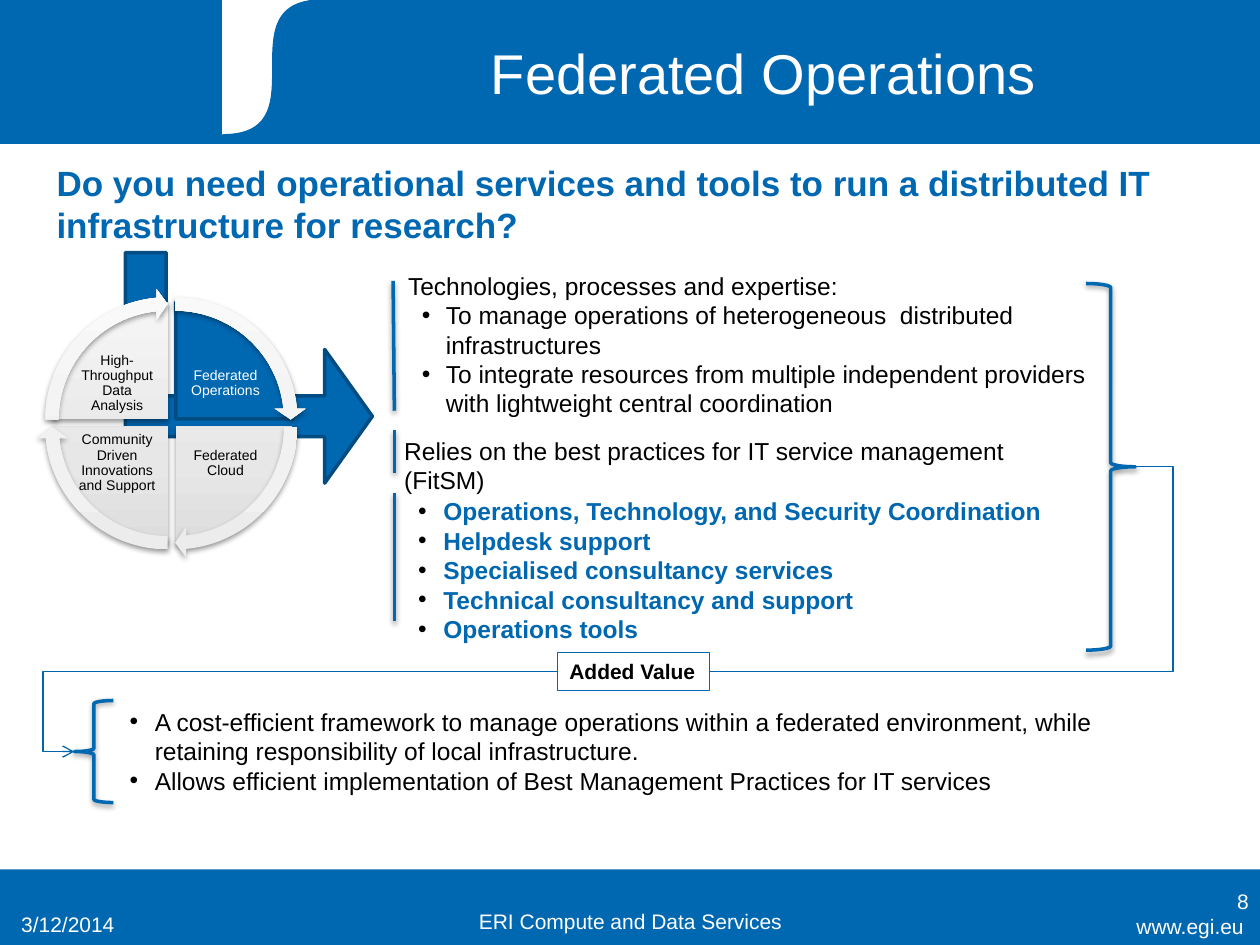
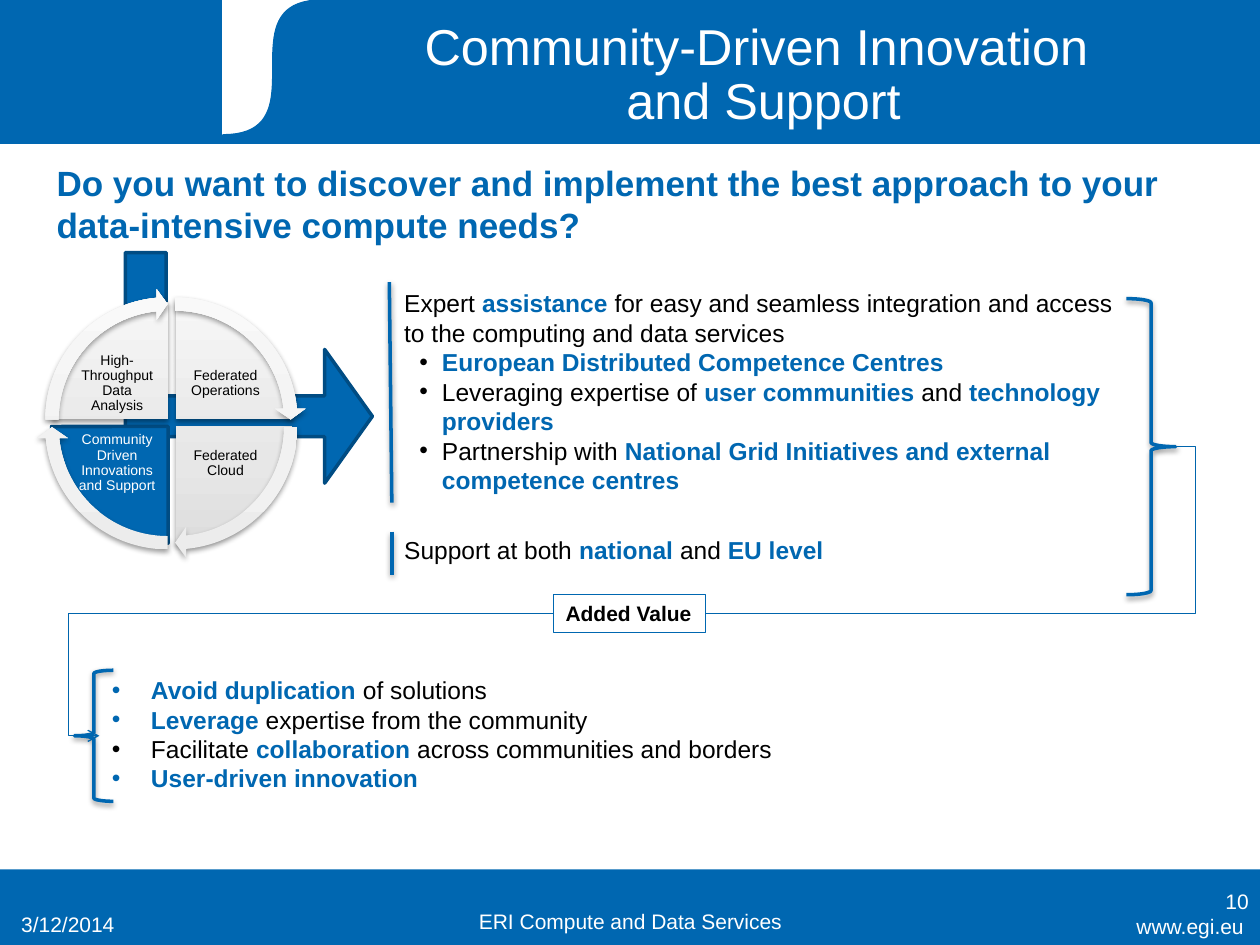
from copy import deepcopy
from dataclasses import dataclass
from typing import Optional

from lxml import etree
from pptx import Presentation, util as u
from pptx.dml.color import RGBColor
from pptx.enum import shapes, text
from pptx.oxml.ns import qn

COLS, ROWS = 100, 75  # grid cells across and down the slide
LEFT, CENTER, RIGHT = text.PP_ALIGN.LEFT, text.PP_ALIGN.CENTER, text.PP_ALIGN.RIGHT
TOP, MIDDLE, BOTTOM = (text.MSO_ANCHOR.TOP, text.MSO_ANCHOR.MIDDLE,
                       text.MSO_ANCHOR.BOTTOM)
SHAPE = shapes.MSO_SHAPE


@dataclass(frozen=True)
class Theme:
    font: str = "Arial"
    blue: str = "0067B1"
    edge: str = "004C83"
    link: str = "0065AD"
    white: str = "FFFFFF"
    black: str = "000000"
    pie: tuple = ((0, "DDDDDD"), (0.35, "E7E7E7"), (1, "F6F6F6"))
    ring: tuple = ((0, "ECECEC"), (0.35, "F1F1F1"), (1, "F9F9F9"))
    question: float = 20
    body: float = 14
    small: float = 12
    label: float = 8
    heavy: float = 2
    thin: float = 0.75
    hair: float = 0.25


T = Theme()


@dataclass(frozen=True)
class Box:
    """A rectangle in grid cells."""
    x: float
    y: float
    w: float
    h: float

    @property
    def right(self) -> float:
        return self.x + self.w

    @property
    def mid(self) -> float:
        return self.y + self.h / 2


@dataclass(frozen=True)
class Block:
    """Paragraphs: a leading bullet indents, and *stars* mark accented words."""
    box: Box
    paragraphs: tuple
    indent: float = 0
    hang: float = 0
    bullet: Optional[str] = T.black


@dataclass(frozen=True)
class Page:
    number: str
    title: str
    title_size: float
    question: str
    active: str
    blocks: tuple
    rules: tuple
    right_brace: Box
    left_brace: Box
    added_value: Box
    left_turn: float
    right_turn: float
    arrow_tip: float


# Clockwise from the top right: label, left and top of pie, left and top of label
QUADRANTS = (
    ("Federated Operations", 4.7, 24, 14.5, 27.9),
    ("Federated Cloud", 4.7, 24.6, 14.5, 34.2),
    ("Community Driven Innovations and Support", 4.1, 24.6, 5.9, 34.2),
    ("High-Throughput Data Analysis", 4.1, 24, 5.9, 27.9),
)

PAGES = (
    Page(
        "8", "Federated Operations", 32,
        "Do you need operational services and tools to run a distributed IT "
        "infrastructure for research?",
        "Federated Operations",
        (
            Block(Box(31.4, 21, 56.4, 12.8), (
                "Technologies, processes and expertise:",
                "•To manage operations of heterogeneous  distributed infrastructures",
                "•To integrate resources from multiple independent providers "
                "with lightweight central coordination"), 3, 1.9),
            Block(Box(31.3, 38.9, 55.2, 12.8), (
                "•*Operations, Technology, and Security Coordination*",
                "•*Helpdesk support*",
                "•*Specialised consultancy services*",
                "•*Technical consultancy and support*",
                "•*Operations tools*"), 2.9, 2),
            Block(Box(31.1, 34.1, 56.4, 3.4), (
                "Relies on the best practices for IT service management (FitSM)",)),
            Block(Box(9.3, 55.6, 80.9, 8.1), (
                "•A cost-efficient framework to manage operations within a federated "
                "environment, while retaining responsibility of local infrastructure.",
                "•Allows efficient implementation of Best Management Practices "
                "for IT services"), 2, 2),
        ),
        ((31.2, 22.3, 31.3, 32.6), (31.3, 39.1, 31.3, 49.3), (31.3, 34.1, 31.3, 37.5)),
        Box(86.2, 22.5, 3.9, 29.1), Box(5.9, 55.6, 3.1, 8.1), Box(44.2, 51.8, 12.1, 3),
        3.4, 93.1, 5.9),
    Page(
        "10", "Community-Driven Innovation \nand Support", 28.8,
        "Do you want to discover and implement the best approach to your "
        "data-intensive compute needs?",
        "Community Driven Innovations and Support",
        (
            Block(Box(31.1, 22.4, 58.3, 17.5), (
                "Expert *assistance *for easy and seamless integration and access "
                "to the computing and data services",
                "•*European Distributed Competence Centres*",
                "•Leveraging expertise of *user communities *and *technology providers*",
                "•Partnership with *National Grid Initiatives and external "
                "competence centres*"), 3, 1.8),
            Block(Box(31.1, 42, 58.3, 3.4), (
                "Support at both *national *and *EU level*",)),
            Block(Box(7.9, 53.1, 86.6, 10.4), (
                "•*Avoid duplication *of solutions",
                "•*Leverage *expertise from the community",
                "•Facilitate *collaboration *across communities and borders",
                "•*User-driven innovation*"), 3.1, 3.1, None),
        ),
        ((30.9, 22.4, 31.1, 39.9), (31.1, 42.2, 31.1, 45.6)),
        Box(89.4, 23.7, 3.9, 23.5), Box(5.9, 53.2, 3.1, 10.4), Box(43.9, 47.2, 12.1, 3),
        5.4, 94.9, 7.9),
)

prs = Presentation()
prs.slide_width, prs.slide_height = u.Inches(10), u.Inches(7.5)


def col(n: float) -> int:
    return round(prs.slide_width * n / COLS)


def row(n: float) -> int:
    return round(prs.slide_height * n / ROWS)


def place(b: Box) -> tuple:
    return col(b.x), row(b.y), col(b.w), row(b.h)


def rgb(color: str) -> RGBColor:
    return RGBColor.from_string(color)


def set_effects(sp, shadow: bool) -> None:
    """Replace the theme's shadow by a soft one below the shape, or by none."""
    effects = etree.SubElement(sp.element.spPr, qn("a:effectLst"))
    if shadow:
        outer = etree.SubElement(effects, qn("a:outerShdw"), blurRad="40000",
                                 dist="20000", dir="5400000", rotWithShape="0")
        color = etree.SubElement(outer, qn("a:srgbClr"), val=T.black)
        etree.SubElement(color, qn("a:alpha"), val="38000")


def set_fill(sp, fill) -> None:
    """Fill with nothing, one colour, or gradient stops running upwards."""
    if fill is None:
        sp.fill.background()
    elif isinstance(fill, str):
        sp.fill.solid()
        sp.fill.fore_color.rgb = rgb(fill)
    else:
        sp.fill.gradient()
        sp.fill.gradient_angle = 90
        stops = sp.element.spPr.find(".//" + qn("a:gsLst"))
        stops.append(deepcopy(stops[0]))
        for stop, (position, color) in zip(sp.fill.gradient_stops, fill):
            stop.position, stop.color.rgb = position, rgb(color)


def style(sp, fill=None, line: Optional[str] = None, width: float = T.thin,
          shadow: bool = False):
    set_fill(sp, fill)
    if line:
        sp.line.color.rgb, sp.line.width = rgb(line), u.Pt(width)
    else:
        sp.line.fill.background()
    set_effects(sp, shadow)
    return sp


def add_shape(s, kind, box: Box, adj: tuple = (), **look):
    sp = s.shapes.add_shape(kind, *place(box))
    for i, value in enumerate(adj):
        sp.adjustments[i] = value
    return style(sp, **look)


def add_bullet(p, block: Block) -> None:
    pPr = p._p.get_or_add_pPr()
    pPr.set("marL", str(col(block.indent)))
    pPr.set("indent", str(-col(block.hang)))
    if block.bullet:
        color = etree.SubElement(pPr, qn("a:buClr"))
        etree.SubElement(color, qn("a:srgbClr"), val=block.bullet)
    etree.SubElement(pPr, qn("a:buFont"), typeface=T.font)
    etree.SubElement(pPr, qn("a:buChar"), char="•")


def add_run(p, words: str, size: float, color: str, bold: bool) -> None:
    for i, part in enumerate(words.split("\n")):
        if i:
            p.add_line_break()
        r = p.add_run()
        r.text = part
        r.font.name, r.font.size, r.font.bold = T.font, u.Pt(size), bold
        r.font.color.rgb = rgb(color)


def write(sp, *paragraphs: str, size: float = T.body, color: str = T.black,
          bold: bool = False, align=LEFT, anchor=TOP, spacing: Optional[float] = None,
          inset: tuple = (1, 0.5), wrap: bool = True,
          block: Optional[Block] = None) -> None:
    tf = sp.text_frame
    tf.word_wrap, tf.vertical_anchor = wrap, anchor
    tf.margin_left = tf.margin_right = col(inset[0])
    tf.margin_top = tf.margin_bottom = row(inset[1])
    for i, words in enumerate(paragraphs):
        p = tf.add_paragraph() if i else tf.paragraphs[0]
        p.alignment, p.line_spacing = align, spacing
        if block and words.startswith("•"):
            add_bullet(p, block)
            words = words[1:]
        for j, part in enumerate(words.split("*")):
            if part:
                accent = j % 2 == 1
                add_run(p, part, size, T.blue if accent else color, bold or accent)


def add_text(s, box: Box, *paragraphs: str, **fmt) -> None:
    write(s.shapes.add_textbox(*place(box)), *paragraphs, **fmt)


def add_line(s, x1: float, y1: float, x2: float, y2: float,
             turn: Optional[float] = None, arrow: bool = False) -> None:
    """A shadowed straight rule, or a thin elbow whose upright runs at column turn."""
    elbow = turn is not None
    kind = shapes.MSO_CONNECTOR.ELBOW if elbow else shapes.MSO_CONNECTOR.STRAIGHT
    sp = s.shapes.add_connector(kind, col(x1), row(y1), col(x2), row(y2))
    sp.line.color.rgb = rgb(T.link if elbow else T.blue)
    sp.line.width = u.Pt(T.thin if elbow else T.heavy)
    if elbow:
        guides = sp.element.spPr.find(".//" + qn("a:avLst"))
        share = round((turn - x1) / (x2 - x1) * 100000)
        etree.SubElement(guides, qn("a:gd"), name="adj1", fmla=f"val {share}")
    if arrow:
        etree.SubElement(sp.line._get_or_add_ln(), qn("a:tailEnd"), type="arrow")
    set_effects(sp, not elbow)


def add_swoosh(s, box: Box, bend: float, steps: int = 40) -> None:
    """Blue panel whose left edge is an S curve, bend columns wide."""
    x0, x1, bottom = box.x, box.x + bend, box.y + box.h
    curve = []
    for i in range(steps + 1):
        t = i / steps
        a, b, c, d = (1 - t) ** 3, 3 * t * (1 - t) ** 2, 3 * t * t * (1 - t), t ** 3
        curve.append((col(x0 * (a + c) + x1 * (b + d)),
                      row(bottom * (a + b) + box.y * (c + d))))
    outline = s.shapes.build_freeform(col(box.right), row(box.y))
    outline.add_line_segments([(col(box.right), row(bottom)), *curve])
    style(outline.convert_to_shape(), fill=T.blue, line=T.blue)


def add_frame(s, page: Page) -> None:
    add_shape(s, SHAPE.RECTANGLE, Box(0, 69, COLS, 6), fill=T.blue)
    add_shape(s, SHAPE.RECTANGLE, Box(0, 0, COLS, 11.4), fill=T.blue, line=T.blue)
    notch = Box(17.7, 0, 19.7, 10.7)
    add_shape(s, SHAPE.RECTANGLE, notch, fill=T.white, line=T.white)
    add_swoosh(s, notch, 7.9)
    add_text(s, Box(23.2, 1.3, 74.8, 9.5), page.title, size=page.title_size,
             color=T.white, align=CENTER, anchor=MIDDLE, spacing=0.9)
    for box, words, align, anchor in (
            (Box(83.9, 72, 15.8, 3.1), "www.egi.eu", RIGHT, TOP),
            (Box(0.7, 70.8, 23.3, 4), "3/12/2014", LEFT, BOTTOM),
            (Box(34.2, 70.6, 31.7, 4), "ERI Compute and Data Services", CENTER, BOTTOM),
            (Box(76.8, 69.5, 23.3, 4), page.number, RIGHT, MIDDLE)):
        add_text(s, box, words, size=T.small, color=T.white, align=align, anchor=anchor)
    add_text(s, Box(3.5, 12.3, 92.1, 7.7), page.question, size=T.question,
             color=T.blue, bold=True)


def add_wheel(s, active: str) -> None:
    arrow = add_shape(s, SHAPE.BENT_UP_ARROW, Box(10.6, 19.4, 18.3, 19.6),
                      (0.177, 0.29, 0.207), fill=T.blue, line=T.edge, width=T.heavy)
    arrow.rotation = 90
    quarter, turn, head = 54, 216, 3.275
    for i, (label, x, y, label_x, label_y) in enumerate(QUADRANTS):
        on = label == active
        look = (dict(fill=T.blue, line=T.edge, width=T.heavy) if on
                else dict(fill=T.pie, shadow=True))
        add_shape(s, SHAPE.PIE, Box(x, y, 18.5, 18.5),
                  ((i + 3) * quarter % turn, i * quarter), **look)
        add_text(s, Box(label_x, label_y, 6.8, 5.1), label, size=T.label,
                 color=T.white if on else T.black, align=CENTER, anchor=MIDDLE,
                 spacing=0.9, inset=(0.1, 0.1))
    for i, (_, x, y, *_) in enumerate(QUADRANTS):
        start, end = (i + 3) * quarter % turn, (i + 4) * quarter - head
        add_shape(s, SHAPE.CIRCULAR_ARROW, Box(x - 1.2, y - 1.1, 20.8, 20.8),
                  (0.051, head, end % turn, start, 0.059), fill=T.ring, shadow=True)


def add_page(page: Page) -> None:
    s = prs.slides.add_slide(prs.slide_layouts[6])
    add_frame(s, page)
    for block in page.blocks:
        add_text(s, block.box, *block.paragraphs, block=block)
    for rule in page.rules:
        add_line(s, *rule)
    add_wheel(s, page.active)
    left, right, added = page.left_brace, page.right_brace, page.added_value
    for kind, box in ((SHAPE.RIGHT_BRACE, right), (SHAPE.LEFT_BRACE, left)):
        add_shape(s, kind, box, line=T.blue, width=T.heavy, shadow=True)
    sp = add_shape(s, SHAPE.RECTANGLE, added, fill=T.white, line=T.blue, width=T.hair)
    write(sp, "Added Value", size=T.small, bold=True, wrap=False)
    add_line(s, right.right, right.mid, added.right, added.mid, page.right_turn)
    add_line(s, added.x, added.mid, page.arrow_tip, left.mid, page.left_turn, arrow=True)


def main() -> None:
    for page in PAGES:
        add_page(page)
    prs.save("out.pptx")


if __name__ == "__main__":
    main()
